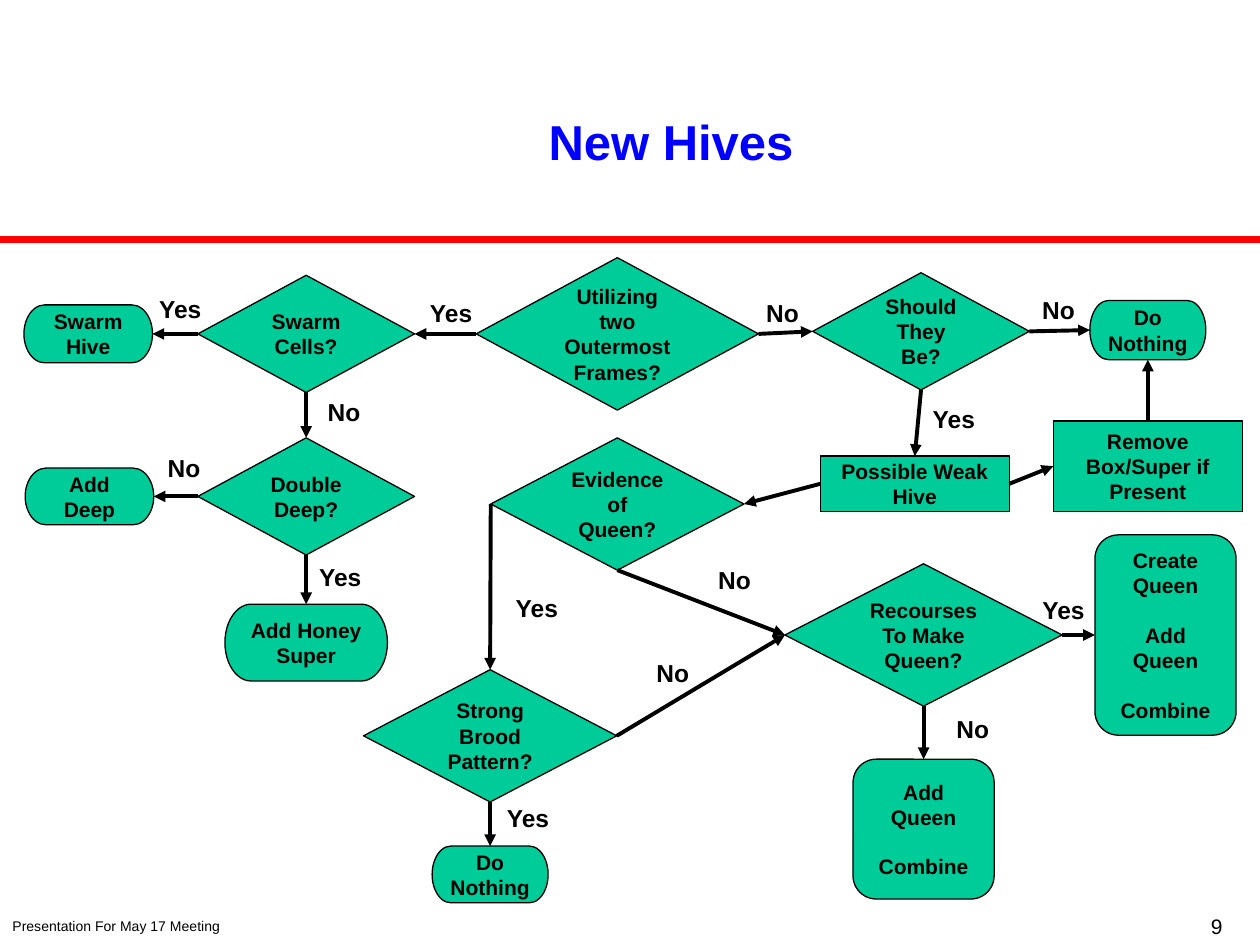
from dataclasses import dataclass

from lxml import etree
from pptx import Presentation
from pptx.dml.color import RGBColor
from pptx.enum import shapes, text
from pptx.oxml import ns
from pptx.util import Inches, Pt


@dataclass(frozen=True)
class Theme:
    font: str = "Arial"
    ink: RGBColor = RGBColor(0, 0, 0)
    title: RGBColor = RGBColor(0, 0, 0xFF)
    rule: RGBColor = RGBColor(0xFF, 0, 0)
    node: RGBColor = RGBColor(0, 0xCC, 0x99)
    title_size: int = 28
    label_size: int = 14
    node_size: int = 12
    number_size: int = 12
    footer_size: int = 8
    option_gap: int = 14


THEME = Theme()
TOP, LEFT, BOTTOM, RIGHT = range(4)
DECISION = shapes.MSO_SHAPE.FLOWCHART_DECISION
PROCESS = shapes.MSO_SHAPE.FLOWCHART_PROCESS
TERMINATOR = shapes.MSO_SHAPE.FLOWCHART_TERMINATOR
OPTIONS = shapes.MSO_SHAPE.FLOWCHART_ALTERNATE_PROCESS

# Key: preset, centre x, centre y, width, height, wording
NODES = {
    "frames": (DECISION, 4.75, 0.65, 2.24, 1.21, "Utilizing two Outermost Frames?"),
    "cells": (DECISION, 2.28, 0.65, 1.72, 0.93, "Swarm Cells?"),
    "should": (DECISION, 7.16, 0.63, 1.72, 0.93, "Should They Be?"),
    "swarm": (TERMINATOR, 0.55, 0.65, 1.02, 0.46, "Swarm Hive"),
    "nothing": (TERMINATOR, 8.96, 0.62, 0.92, 0.47, "Do Nothing"),
    "double": (DECISION, 2.28, 1.94, 1.72, 0.93, "Double Deep?"),
    "deep": (TERMINATOR, 0.56, 1.94, 1.02, 0.45, "Add Deep"),
    "honey": (TERMINATOR, 2.28, 3.1, 1.29, 0.61, "Add Honey Super"),
    "evidence": (DECISION, 4.75, 2, 2.01, 1.05, "Evidence of Queen?"),
    "weak": (PROCESS, 7.11, 1.84, 1.5, 0.44, "Possible Weak Hive"),
    "remove": (PROCESS, 8.96, 1.7, 1.5, 0.72, "Remove Box/Super if Present"),
    "brood": (DECISION, 3.74, 3.84, 2.01, 1.05, "Strong Brood Pattern?"),
    "leave": (TERMINATOR, 3.74, 4.94, 0.92, 0.45, "Do Nothing"),
    "resources": (DECISION, 7.18, 3.04, 2.2, 1.13, "Recourses To Make Queen?"),
    "all options": (OPTIONS, 9.1, 3.04, 1.12, 1.59, "Create Queen\nAdd Queen\nCombine"),
    "options": (OPTIONS, 7.18, 4.58, 1.12, 1.11, "Add Queen\nCombine"),
}

# From node, side, to node, side
ARROWS = [
    ("frames", LEFT, "cells", RIGHT),
    ("frames", RIGHT, "should", LEFT),
    ("cells", LEFT, "swarm", RIGHT),
    ("cells", BOTTOM, "double", TOP),
    ("double", LEFT, "deep", RIGHT),
    ("double", BOTTOM, "honey", TOP),
    ("should", RIGHT, "nothing", LEFT),
    ("should", BOTTOM, "weak", TOP),
    ("weak", LEFT, "evidence", RIGHT),
    ("weak", RIGHT, "remove", LEFT),
    ("remove", TOP, "nothing", BOTTOM),
    ("evidence", LEFT, "brood", TOP),
    ("evidence", BOTTOM, "resources", LEFT),
    ("brood", RIGHT, "resources", LEFT),
    ("brood", BOTTOM, "leave", TOP),
    ("resources", RIGHT, "all options", LEFT),
    ("resources", BOTTOM, "options", TOP),
]

# Answer: centres of its labels
LABELS = {
    "Yes": [(3.43, 0.48), (1.28, 0.45), (2.55, 2.58), (7.42, 1.32),
            (4.11, 2.82), (4.04, 4.49), (8.29, 2.84)],
    "No": [(6.06, 0.48), (8.25, 0.46), (2.58, 1.27), (1.31, 1.71),
           (5.68, 2.6), (5.19, 3.34), (7.57, 3.78)],
}


def write(s, wording, size, color=THEME.ink, bold=True,
          align=text.PP_ALIGN.CENTER, anchor=text.MSO_ANCHOR.MIDDLE):
    tf = s.text_frame
    tf.word_wrap = True
    tf.vertical_anchor = anchor
    tf.text = wording
    for p in tf.paragraphs:
        p.alignment = align
        for r in p.runs:
            r.font.name = THEME.font
            r.font.size = Pt(size)
            r.font.bold = bold
            r.font.color.rgb = color
    return tf


def add_text(sp, x, y, w, h, wording, size, **style):
    s = sp.add_textbox(Inches(x), Inches(y), Inches(w), Inches(h))
    return write(s, wording, size, **style)


def add_line(sp, color, width, x1=0, y1=0, x2=0, y2=0):
    line = sp.add_connector(shapes.MSO_CONNECTOR.STRAIGHT,
                            Inches(x1), Inches(y1), Inches(x2), Inches(y2))
    line.line.color.rgb = color
    line.line.width = Pt(width)
    etree.SubElement(line._element.spPr, ns.qn("a:effectLst"))
    return line


def add_node(sp, preset, cx, cy, w, h, wording):
    s = sp.add_shape(preset, Inches(cx - w / 2), Inches(cy - h / 2), Inches(w), Inches(h))
    s.shadow.inherit = False
    s.fill.solid()
    s.fill.fore_color.rgb = THEME.node
    s.line.color.rgb = THEME.ink
    s.line.width = Pt(0.75)
    tf = write(s, wording, THEME.node_size)
    for p in tf.paragraphs[1:]:
        p.space_before = Pt(THEME.option_gap)
    return s


def add_arrow(sp, start, start_side, end, end_side):
    arrow = add_line(sp, THEME.ink, 2.25)
    arrow.begin_connect(start, start_side)
    arrow.end_connect(end, end_side)
    etree.SubElement(arrow.line._get_or_add_ln(), ns.qn("a:tailEnd"), type="triangle")


def add_header(sp, x, y, w, h):
    tf = add_text(sp, x + 1.78, y + 0.77, 7.09, 0.75, "New Hives",
                  THEME.title_size, color=THEME.title)
    tf.paragraphs[0].line_spacing = Pt(30)
    add_line(sp, THEME.rule, 4, x, y + h, x + w, y + h)


def add_flowchart(sp, x, y):
    nodes = {key: add_node(sp, preset, x + cx, y + cy, w, h, wording)
             for key, (preset, cx, cy, w, h, wording) in NODES.items()}
    for start, start_side, end, end_side in ARROWS:
        add_arrow(sp, nodes[start], start_side, nodes[end], end_side)
    w, h = 0.59, 0.34
    for answer, centres in LABELS.items():
        for cx, cy in centres:
            add_text(sp, x + cx - w / 2, y + cy - h / 2, w, h, answer, THEME.label_size)


def add_footer(sp, x, y, w):
    add_text(sp, x, y + 0.03, 2.78, 0.24, "Presentation For May 17 Meeting",
             THEME.footer_size, bold=False, align=text.PP_ALIGN.LEFT,
             anchor=text.MSO_ANCHOR.TOP)
    add_text(sp, x + w - 3.75, y, 3.55, 0.3, "9", THEME.number_size, bold=False,
             align=text.PP_ALIGN.RIGHT, anchor=text.MSO_ANCHOR.TOP)


def main():
    prs = Presentation()
    prs.slide_width, prs.slide_height = Inches(10), Inches(7.5)
    sp = prs.slides.add_slide(prs.slide_layouts[6]).shapes
    add_header(sp, 0, 0, 10, 1.9)
    add_flowchart(sp, 0.15, 2)
    add_footer(sp, 0, 7.2, 10)
    prs.save("out.pptx")


if __name__ == "__main__":
    main()
